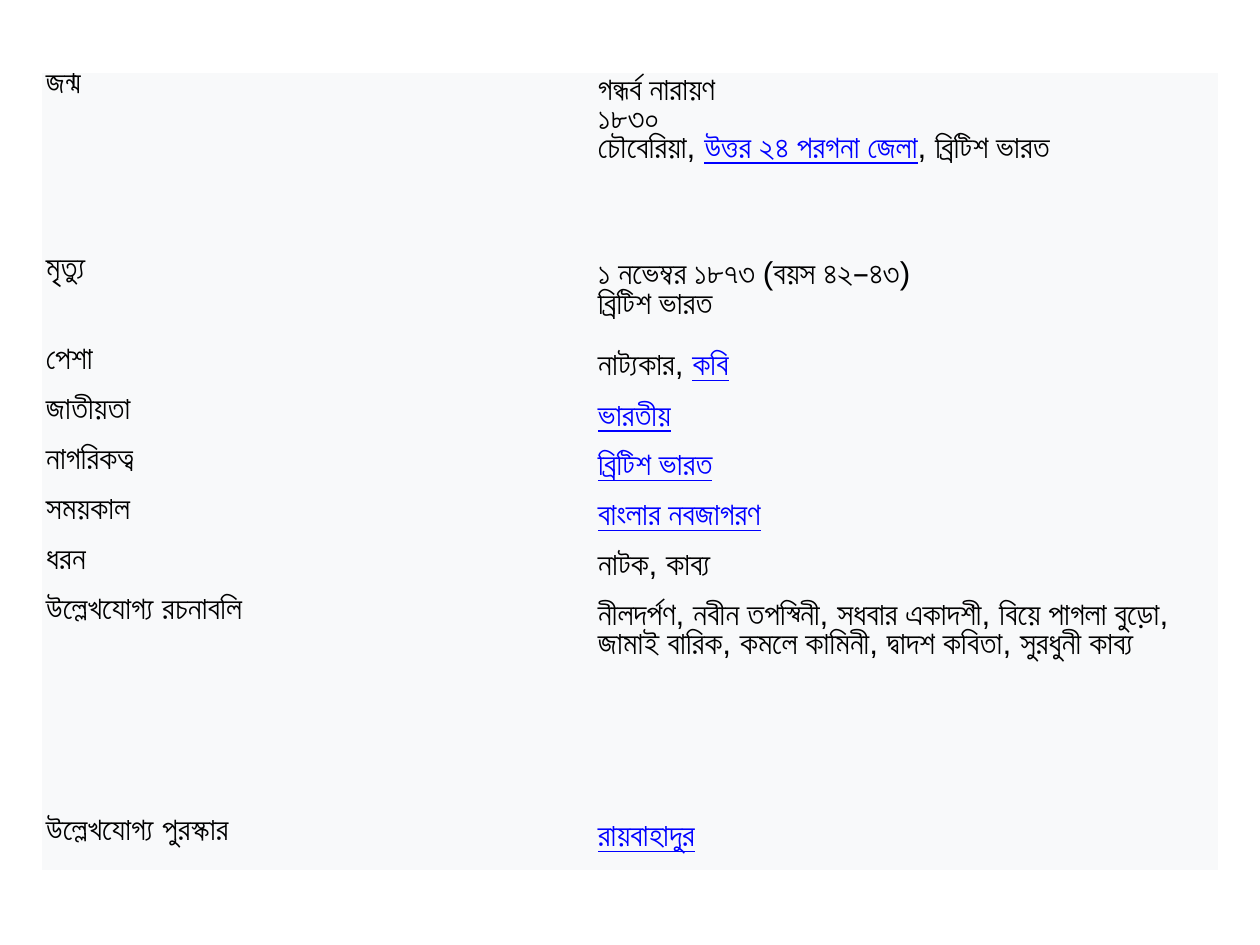
from dataclasses import dataclass

from pptx import Presentation
from pptx.dml.color import RGBColor
from pptx.oxml.ns import qn
from pptx.util import Emu, Pt

PX = 914400 // 126
NO_STYLE_NO_GRID = "{2D5ABB26-0587-4C30-8999-92F81FD0307C}"


@dataclass(frozen=True)
class Theme:
    font: str = "Arial"
    size: int = 18
    ink: str = "000000"
    link: str = "0000FF"
    panel: str = "F8F9FA"
    label_leading: float = 13.2
    value_leading: float = 16.8
    gap: int = 6


THEME = Theme()
COLUMN_WIDTHS = (552, 624)
ROW = 50

# Height in px, label, value; text between bars is a link.
FACTS = [
    (185, "জন্ম", "গন্ধর্ব নারায়ণ\n১৮৩০\nচৌবেরিয়া, |উত্তর ২৪ পরগনা জেলা|, ব্রিটিশ ভারত"),
    (91, "মৃত্যু", "১ নভেম্বর ১৮৭৩ (বয়স ৪২–৪৩)\nব্রিটিশ ভারত"),
    (ROW, "পেশা", "নাট্যকার, |কবি|"),
    (ROW, "জাতীয়তা", "|ভারতীয়|"),
    (ROW, "নাগরিকত্ব", "|ব্রিটিশ ভারত|"),
    (ROW, "সময়কাল", "|বাংলার নবজাগরণ|"),
    (ROW, "ধরন", "নাটক, কাব্য"),
    (221, "উল্লেখযোগ্য রচনাবলি",
     "নীলদর্পণ, নবীন তপস্বিনী, সধবার একাদশী, বিয়ে পাগলা বুড়ো, "
     "জামাই বারিক, কমলে কামিনী, দ্বাদশ কবিতা, সুরধুনী কাব্য"),
    (ROW, "উল্লেখযোগ্য পুরস্কার", "|রায়বাহাদুর|"),
]


def px(length):
    return Emu(length * PX)


def add_span(para, text, *, bold=False, link=False):
    """Add text to a paragraph, turning each newline into a line break."""
    for number, line in enumerate(text.split("\n")):
        if number:
            para.add_line_break()
        span = para.add_run()
        span.text = line
        span.font.name = THEME.font
        span.font.size = Pt(THEME.size)
        span.font.bold = bold
        span.font.underline = link
        span.font.color.rgb = RGBColor.from_string(THEME.link if link else THEME.ink)


def fill_cell(cell, text, *, leading, bold=False, right_margin=4):
    cell.fill.solid()
    cell.fill.fore_color.rgb = RGBColor.from_string(THEME.panel)
    cell.margin_left = cell.margin_top = cell.margin_bottom = px(4)
    cell.margin_right = px(right_margin)
    para = cell.text_frame.paragraphs[0]
    para.line_spacing = Pt(leading)
    para.space_before = para.space_after = Pt(THEME.gap)
    for number, part in enumerate(text.split("|")):
        if part:
            add_span(para, part, bold=bold, link=number % 2 == 1)


def add_fact_table(page, left, top):
    heights = [height for height, _, _ in FACTS]
    table = page.shapes.add_table(
        len(FACTS), len(COLUMN_WIDTHS), px(left), px(top),
        px(sum(COLUMN_WIDTHS)), px(sum(heights))).table
    table.first_row = table.horz_banding = False
    table._tbl.tblPr.find(qn("a:tableStyleId")).text = NO_STYLE_NO_GRID
    for column, width in zip(table.columns, COLUMN_WIDTHS):
        column.width = px(width)
    for row, (height, label, value) in zip(table.rows, FACTS):
        row.height = px(height)
        label_cell, value_cell = row.cells
        fill_cell(label_cell, label, leading=THEME.label_leading,
                  bold=True, right_margin=11)
        fill_cell(value_cell, value, leading=THEME.value_leading)


def main():
    deck = Presentation()
    deck.slide_width, deck.slide_height = px(1260), px(945)
    page = deck.slides.add_slide(deck.slide_layouts[6])
    add_fact_table(page, left=42, top=73)
    deck.save("out.pptx")


if __name__ == "__main__":
    main()
